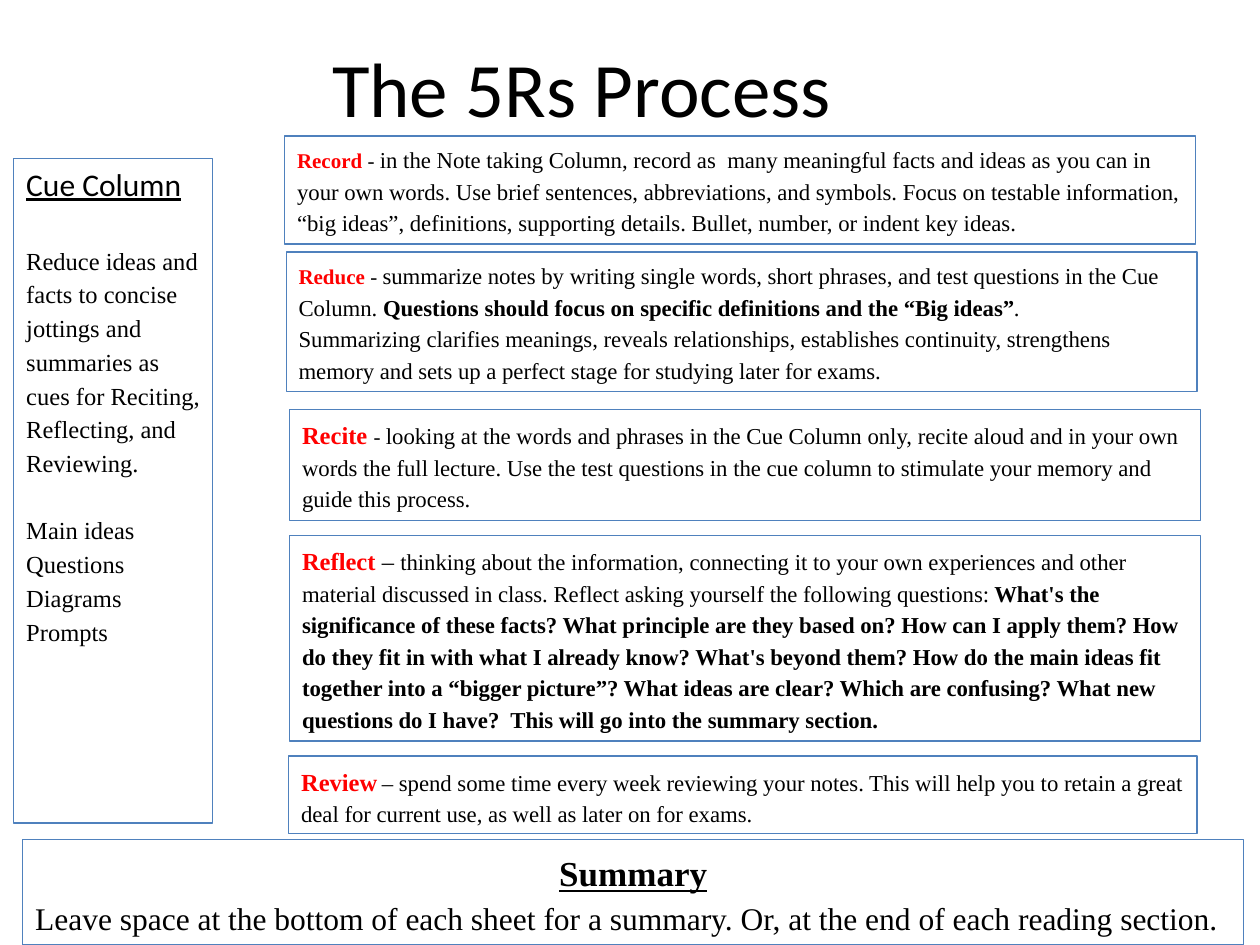
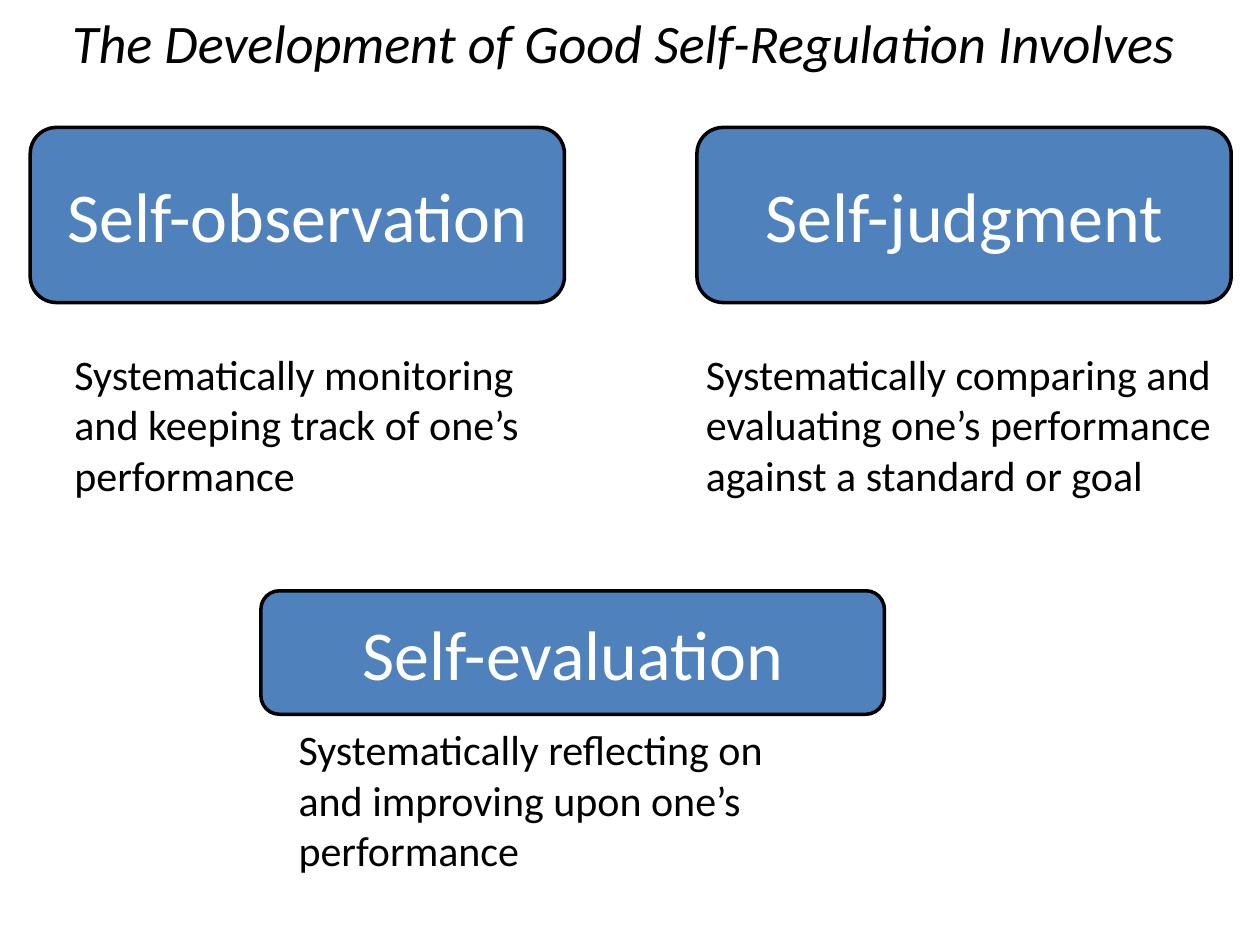
import pptx
import pptx.dml.color
import pptx.enum.shapes
import pptx.enum.text
import pptx.util

Cm = pptx.util.Cm
Pt = pptx.util.Pt
Align = pptx.enum.text.PP_ALIGN
Anchor = pptx.enum.text.MSO_ANCHOR
Shape = pptx.enum.shapes.MSO_SHAPE

COLORS = {"blue": "4F81BD", "red": "FF0000", "black": "000000", "white": "FFFFFF"}
SANS = "Calibri"
SERIF = "Times New Roman"
BOLD = {"bold": True}

# Each step: box in cm, then paragraphs of (text, format) runs
STEPS = [
    ((5.74, 2.74, 18.36, 2.18), [[
        ("Record", {"size": 12, "color": "red", "bold": True}),
        (" - ", {"size": 12}),
        ("in the Note taking Column, record as  many meaningful facts and ideas as you "
         "can in your own words. Use brief sentences, abbreviations, and symbols. Focus "
         "on testable information, “big ideas”, definitions, supporting details. Bullet, "
         "number, or indent key ideas.", {})]]),
    ((5.77, 5.08, 18.36, 2.82), [[
        ("Reduce", {"size": 12, "color": "red", "bold": True}),
        (" - ", {"size": 12}),
        ("summarize notes by writing single words, short phrases, and test questions in "
         "the Cue Column. ", {}),
        ("Questions should focus on specific definitions and the “Big ideas”", BOLD),
        (".", {})], [
        ("Summarizing clarifies meanings, reveals relationships, establishes continuity, "
         "strengthens memory and sets up a perfect stage for studying later for exams.", {})]]),
    ((5.84, 8.26, 18.36, 2.24), [[
        ("Recite ", {"size": 14, "color": "red", "bold": True}),
        ("- ", {"size": 12}),
        ("looking at the words and phrases in the Cue Column only, recite aloud and in "
         "your own words the full lecture. Use the test questions in the cue column to "
         "stimulate your memory and guide this process.", {})]]),
    ((5.84, 10.8, 18.36, 4.14), [[
        ("Reflect", {"size": 14, "color": "red", "bold": True}),
        (" – ", {"size": 14}),
        ("thinking about the information, connecting it to your own experiences and "
         "other material discussed in class. Reflect asking yourself the following "
         "questions: ", {}),
        ("What's the significance of these facts? What principle are they based on? How "
         "can I apply them? How do they fit in with what I already know? What's beyond "
         "them? How do the main ideas fit together into a “bigger picture”? What ideas "
         "are clear? Which are confusing? What new questions do I have?  This will go "
         "into the summary section.", BOLD)]]),
    ((5.82, 15.24, 18.31, 1.57), [[
        ("Review", {"size": 14, "color": "red", "bold": True}),
        (" ", {"size": 10}),
        ("– spend some time every week reviewing your notes. This will help you to "
         "retain a great deal for current use, as well as later on for exams.", {})]]),
]

# Each card: box in cm, heading, caption indent, gap above caption, caption lines
CARDS = [
    ((0.61, 2.57, 10.77, 3.53), "Self-observation", 0.89, 0.91,
     ["Systematically monitoring", "and keeping track of one’s", "performance"]),
    ((14.05, 2.57, 10.77, 3.53), "Self-judgment", 0.18, 0.91,
     ["Systematically comparing and", "evaluating one’s performance",
      "against a standard or goal"]),
    ((5.26, 11.91, 12.57, 2.49), "Self-evaluation", 0.76, 0.18,
     ["Systematically reflecting on", "and improving upon one’s", "performance"]),
]


def color(name):
    return pptx.dml.color.RGBColor.from_string(COLORS[name])


def lengths(box):
    return [Cm(value) for value in box]


def write(frame, text, align=Align.LEFT, lead=1.0, before=0, **style):
    """Add one paragraph; text is a string or a list of (text, format) runs."""
    para = frame.paragraphs[0]
    if para.runs:
        para = frame.add_paragraph()
    para.alignment = align
    para.line_spacing = lead
    para.space_before = Pt(before)
    for part, extra in [(text, {})] if isinstance(text, str) else text:
        look = {**style, **extra}
        run = para.add_run()
        run.text = part
        font = run.font
        font.name = look.get("face", SANS)
        font.size = Pt(look["size"])
        font.bold = look.get("bold", False)
        font.italic = look.get("italic", False)
        font.underline = look.get("under", False)
        font.color.rgb = color(look.get("color", "black"))


def setup(frame, anchor, inset=None):
    frame.word_wrap = True
    frame.auto_size = pptx.enum.text.MSO_AUTO_SIZE.NONE
    frame.vertical_anchor = anchor
    if inset is not None:
        frame.margin_left = frame.margin_right = Cm(inset)
        frame.margin_top = frame.margin_bottom = Cm(inset)
    return frame


def add_title(slide, box, text, anchor, **style):
    title = slide.shapes.title
    title.left, title.top, title.width, title.height = lengths(box)
    write(setup(title.text_frame, anchor), text, align=Align.CENTER, **style)


def add_frame(slide, box):
    """Draw a thin blue outline and return its text frame."""
    shape = slide.shapes.add_shape(Shape.RECTANGLE, *lengths(box))
    shape.shadow.inherit = False
    shape.fill.background()
    shape.line.color.rgb = color("blue")
    shape.line.width = Pt(0.75)
    return setup(shape.text_frame, Anchor.TOP)


def add_cues(slide, box):
    frame = add_frame(slide, box)
    write(frame, "Cue Column", size=18, under=True)
    lines = [
        ("Reduce ideas and facts to concise", 22),
        ("jottings and summaries as cues for Reciting, Reflecting, and Reviewing.", 0),
        ("Main ideas", 19), ("Questions", 0), ("Diagrams", 0), ("Prompts", 0),
    ]
    for text, before in lines:
        write(frame, text, lead=1.15, before=before, size=14, face=SERIF)


def add_step(slide, box, paras):
    frame = add_frame(slide, box)
    for runs in paras:
        write(frame, runs, lead=1.15, size=13, face=SERIF)


def add_summary(slide, box):
    frame = add_frame(slide, box)
    write(frame, "Summary", align=Align.CENTER, lead=1.15, size=20, face=SERIF,
          bold=True, under=True)
    write(frame, "Leave space at the bottom of each sheet for a summary. "
          "Or, at the end of each reading section.", lead=1.15, size=18, face=SERIF)


def add_card(slide, box, head, indent, gap, lines):
    """Group a rounded heading with the caption below it."""
    left, top, width, height = box
    shapes = slide.shapes.add_group_shape().shapes
    tile = shapes.add_shape(Shape.ROUNDED_RECTANGLE, *lengths(box))
    tile.adjustments[0] = 0.15
    tile.shadow.inherit = False
    tile.fill.solid()
    tile.fill.fore_color.rgb = color("blue")
    tile.line.color.rgb = color("black")
    tile.line.width = Pt(2)
    write(setup(tile.text_frame, Anchor.MIDDLE, 0), head, align=Align.CENTER,
          size=40, color="white")
    note = shapes.add_textbox(
        *lengths((left + indent, top + height + gap, width, 3.07)))
    frame = setup(note.text_frame, Anchor.MIDDLE, 0)
    for line in lines:
        write(frame, line, size=24)


def build_process(slide):
    add_title(slide, (0.3, 0.38, 22.86, 2.74), "The 5Rs Process", Anchor.MIDDLE, size=44)
    add_cues(slide, (0.28, 3.2, 4.01, 13.39))
    for box, paras in STEPS:
        add_step(slide, box, paras)
    add_summary(slide, (0.46, 16.92, 24.61, 2.13))


def build_growth(slide):
    add_title(slide, (0.28, 0.05, 24.56, 3.38),
              "The Development of Good Self-Regulation Involves", Anchor.TOP,
              size=31, italic=True)
    for card in CARDS:
        add_card(slide, *card)


def main():
    deck = pptx.Presentation()
    deck.slide_width, deck.slide_height = Cm(25.4), Cm(19.05)
    layout = deck.slide_layouts.get_by_name("Title Only")
    for build in (build_process, build_growth):
        build(deck.slides.add_slide(layout))
    deck.save("out.pptx")


if __name__ == "__main__":
    main()
